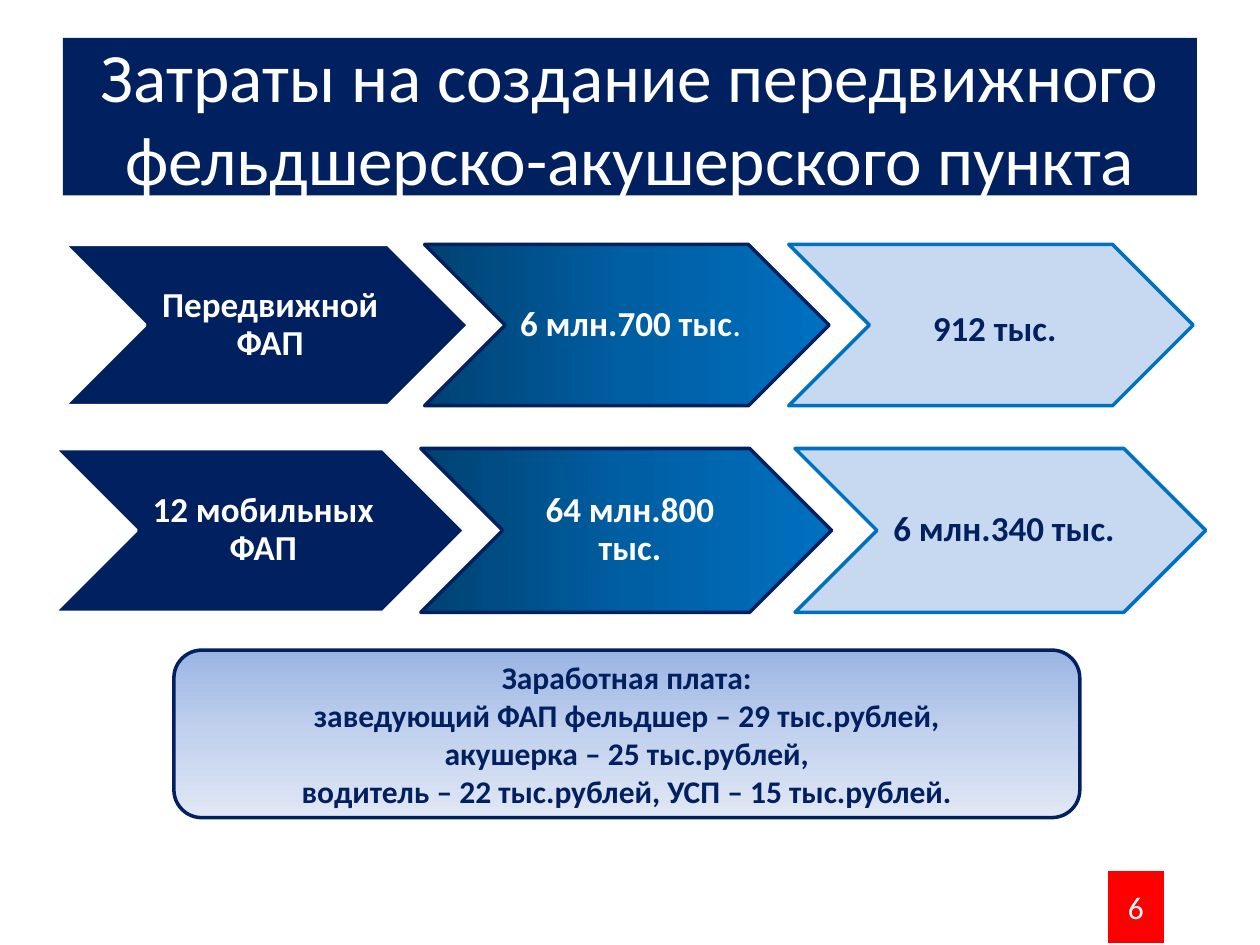
from copy import deepcopy
from lxml import etree
from pptx import Presentation
from pptx.dml.color import RGBColor
from pptx.enum.shapes import MSO_SHAPE as Geo
from pptx.enum.text import MSO_ANCHOR as Anchor, PP_ALIGN as Align
from pptx.oxml.ns import qn
from pptx.util import Inches, Pt

NAVY = RGBColor(0x00, 0x20, 0x60)
BLUE = RGBColor(0x00, 0x70, 0xC0)
PALE = RGBColor(0xC6, 0xD9, 0xF1)
RED = RGBColor(0xFF, 0x00, 0x00)
WHITE = RGBColor(0xFF, 0xFF, 0xFF)
DEEP = [RGBColor(0x00, 0x42, 0x72), RGBColor(0x00, 0x5E, 0xA2), BLUE]
SKY = [RGBColor(0x9A, 0xB5, 0xE4), RGBColor(0xC2, 0xD1, 0xED),
       RGBColor(0xE1, 0xE8, 0xF5)]

# Fill, outline and text colour of each step in a row
STYLES = [(NAVY, WHITE, WHITE), (DEEP, NAVY, WHITE), (PALE, BLUE, NAVY)]


def blend(shape, tones, angle):
    """Fill a shape with three evenly spaced gradient stops."""
    shape.fill.gradient()
    shape.fill.gradient_angle = angle
    first = next(shape._element.spPr.iter(qn("a:gs")))
    first.addnext(deepcopy(first))
    for i, (stop, tone) in enumerate(zip(shape.fill.gradient_stops, tones)):
        stop.color.rgb = tone
        stop.position = i / 2


def block(shapes, geo, box, fill, edge=None, angle=0):
    shape = shapes.add_shape(geo, *map(Inches, box))
    shape.shadow.inherit = False
    if isinstance(fill, list):
        blend(shape, fill, angle)
    else:
        shape.fill.solid()
        shape.fill.fore_color.rgb = fill
    if edge is None:
        shape.line.fill.background()
    else:
        shape.line.color.rgb = edge
        shape.line.width = Pt(2)
    return shape


def write(shape, text, size, color, bold=False, space=1.0):
    frame = shape.text_frame
    frame.word_wrap = True
    frame.vertical_anchor = Anchor.MIDDLE
    frame.text = text
    for para in frame.paragraphs:
        para.alignment = Align.CENTER
        para.line_spacing = space
        for run in para.runs:
            font = run.font
            font.name = "Calibri"
            font.size = Pt(size)
            font.bold = bold
            font.color.rgb = color
    return frame


def title(slide, box):
    shape = block(slide.shapes, Geo.RECTANGLE, box, NAVY)
    write(shape, "Затраты на создание передвижного "
          "фельдшерско-акушерского пункта", 39.6, WHITE)


def step(shapes, box, style, text, drop=0):
    """Draw a chevron and its label between notch and tip."""
    left, top, width, height = box
    fill, edge, ink = style
    block(shapes, Geo.CHEVRON, box, fill, edge)
    label = shapes.add_textbox(Inches(left + height / 2), Inches(top + drop),
                               Inches(width - height), Inches(height))
    frame = write(label, text, 20, ink, True, 0.9)
    frame.margin_left = Inches(0.09)
    frame.margin_right = frame.margin_top = frame.margin_bottom = Inches(0.03)
    return frame


def chain(slide, lefts, top, size, texts, drops=(0, 0, 0)):
    """Draw one row of three steps as a group and return their labels."""
    shapes = slide.shapes.add_group_shape().shapes
    return [step(shapes, (left, top, *size), style, text, drop)
            for left, style, text, drop in zip(lefts, STYLES, texts, drops)]


def wages(slide, box):
    shape = block(slide.shapes, Geo.ROUNDED_RECTANGLE, box, SKY, NAVY, 270)
    write(shape, "Заработная плата:\n"
          "заведующий ФАП фельдшер – 29 тыс.рублей,\n"
          "акушерка – 25 тыс.рублей,\n"
          "водитель – 22 тыс.рублей, УСП – 15 тыс.рублей.", 18, NAVY, True)


def number(slide, box):
    shape = block(slide.shapes, Geo.RECTANGLE, box, RED, WHITE)
    write(shape, "6", 18, WHITE)


def main():
    deck = Presentation()
    deck.slide_width, deck.slide_height = Inches(10), Inches(7.5)
    slide = deck.slides.add_slide(deck.slide_layouts[6])

    title(slide, (0.5, 0.3, 9, 1.25))

    # Cost of a single mobile unit; its sum ends in a light full stop
    labels = chain(slide, (0.51, 3.37, 6.26), 1.94, (3.21, 1.28),
                   ("Передвижной ФАП", "6 млн.700 тыс", "912 тыс."),
                   (0, 0, 0.04))
    dot = labels[1].paragraphs[0].add_run()
    dot.text = "."
    dot.font.name = "Calibri"
    dot.font.size = Pt(20)
    dot.font.color.rgb = WHITE

    number(slide, (8.78, 6.9, 0.47, 0.6))
    wages(slide, (1.38, 5.16, 7.19, 1.33))

    # Cost of twelve units
    chain(slide, (0.43, 3.34, 6.31), 3.56, (3.26, 1.3),
          ("12 мобильных ФАП", "64 млн.800 тыс.", "6 млн.340 тыс."))

    deck.save("out.pptx")


if __name__ == "__main__":
    main()
